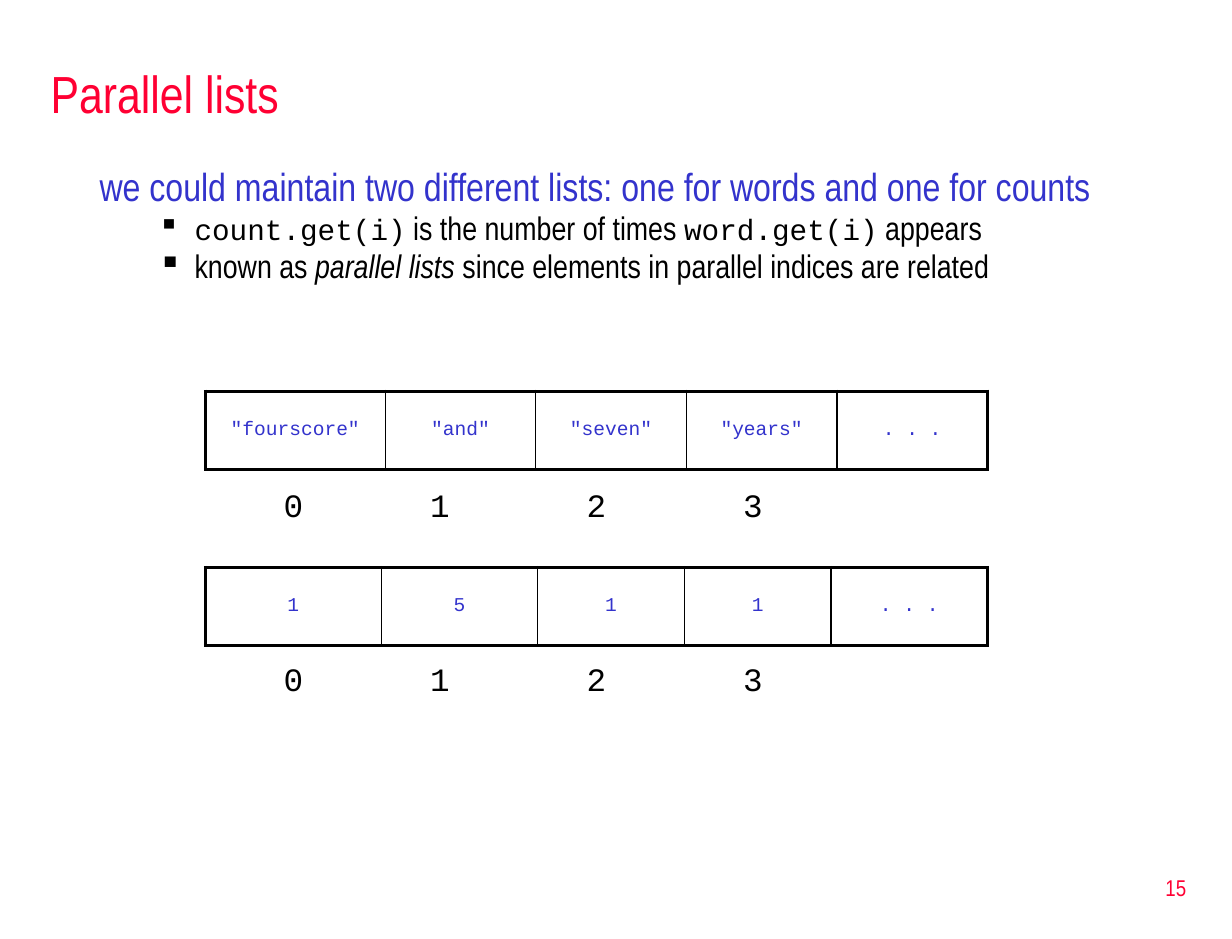
from lxml import etree
from pptx import Presentation, util as u
from pptx.dml.color import RGBColor
from pptx.enum import text
from pptx.oxml import ns

RED = RGBColor(0xFF, 0x00, 0x33)
BLUE = RGBColor(0x33, 0x33, 0xCC)
BLACK = RGBColor(0x00, 0x00, 0x00)
SANS, MONO = "Arial Narrow", "Courier New"
COLUMNS, ROWS = 126, 96
CELL = u.Inches(10.5) // COLUMNS


def grid(*units):
    return [round(unit * CELL) for unit in units]


def add_child(parent, tag, **attributes):
    return etree.SubElement(parent, ns.qn(tag), attributes)


def add_run(paragraph, words, size, font, color, italic=False):
    run = paragraph.add_run()
    run.text = words
    run.font.size = u.Pt(size)
    run.font.name = font
    run.font.color.rgb = color
    run.font.italic = italic


def space_before(paragraph, percent):
    spacing = add_child(paragraph._p.get_or_add_pPr(), "a:spcBef")
    add_child(spacing, "a:spcPct", val=str(percent * 1000))


def add_frame(slide, box, anchor=text.MSO_ANCHOR.TOP):
    frame = slide.shapes.add_textbox(*grid(*box)).text_frame
    frame.word_wrap = True
    frame.vertical_anchor = anchor
    return frame


def add_line(slide, box, words, size, color, align):
    paragraph = add_frame(slide, box, text.MSO_ANCHOR.MIDDLE).paragraphs[0]
    paragraph.alignment = align
    add_run(paragraph, words, size, SANS, color)


def add_body(slide, box, statement, points):
    frame = add_frame(slide, box)
    lead = frame.paragraphs[0]
    space_before(lead, 20)
    add_run(lead, statement, 24, SANS, BLUE)
    for runs in points:
        point = frame.add_paragraph()
        point.line_spacing = 0.8
        space_before(point, 20)
        properties = point._p.get_or_add_pPr()
        properties.set("marL", str(u.Inches(0.81)))
        properties.set("indent", str(u.Inches(-0.31)))
        add_child(properties, "a:buChar", char="▪")
        for words, size, font, italic in runs:
            add_run(point, words, size, font, BLACK, italic)


def add_border(cell, side, width):
    line = add_child(cell._tc.get_or_add_tcPr(), f"a:{side}", w=str(u.Pt(width)))
    add_child(add_child(line, "a:solidFill"), "a:srgbClr", val=str(BLACK))


def add_list(slide, box, widths, values):
    last = len(values) - 1
    table = slide.shapes.add_table(1, len(values), *grid(*box)).table
    table.first_row = table.horz_banding = False
    for i, (width, value) in enumerate(zip(widths, values)):
        table.columns[i].width = grid(width)[0]
        cell = table.cell(0, i)
        cell.vertical_anchor = text.MSO_ANCHOR.MIDDLE
        add_border(cell, "lnL", 2.25 if i == 0 else 1)
        add_border(cell, "lnR", 2.25 if i == last else 1)
        add_border(cell, "lnT", 2.25)
        add_border(cell, "lnB", 2.25)
        cell.fill.background()
        paragraph = cell.text_frame.paragraphs[0]
        paragraph.alignment = text.PP_ALIGN.CENTER
        space_before(paragraph, 20)
        add_run(paragraph, value, 12, MONO, BLUE)


def add_indices(slide, top):
    for index, left in enumerate((23, 38, 54, 70)):
        paragraph = add_frame(slide, (left, top, 14, 5.2)).paragraphs[0]
        paragraph.alignment = text.PP_ALIGN.CENTER
        space_before(paragraph, 50)
        add_run(paragraph, str(index), 20, MONO, BLACK)


def main():
    deck = Presentation()
    deck.slide_width, deck.slide_height = grid(COLUMNS, ROWS)
    slide = deck.slides.add_slide(deck.slide_layouts[6])
    add_line(slide, (96, 87.5, 26.5, 6.4), "15", 14, RED, text.PP_ALIGN.RIGHT)
    add_line(slide, (4, 5, 119, 9), "Parallel lists", 32, RED, text.PP_ALIGN.LEFT)
    add_body(
        slide, (9, 16, 114.2, 16),
        "we could maintain two different lists: one for words and one for counts",
        [
            [("count.get(i)", 18, MONO, False),
             (" is the number of times ", 20, SANS, False),
             ("word.get(i)", 18, MONO, False),
             (" appears", 20, SANS, False)],
            [("known as ", 20, SANS, False),
             ("parallel lists ", 20, SANS, True),
             ("since elements in parallel indices are related", 20, SANS, False)],
        ],
    )
    add_list(slide, (21, 40, 80, 8), (18.4, 15.4, 15.4, 15.4, 15.4),
             ('"fourscore"', '"and"', '"seven"', '"years"', ". . ."))
    add_indices(slide, 49)
    add_list(slide, (21, 58, 80, 8), (18, 16, 15, 15, 16),
             ("1", "5", "1", "1", ". . ."))
    add_indices(slide, 66.8)
    deck.save("out.pptx")


if __name__ == "__main__":
    main()
